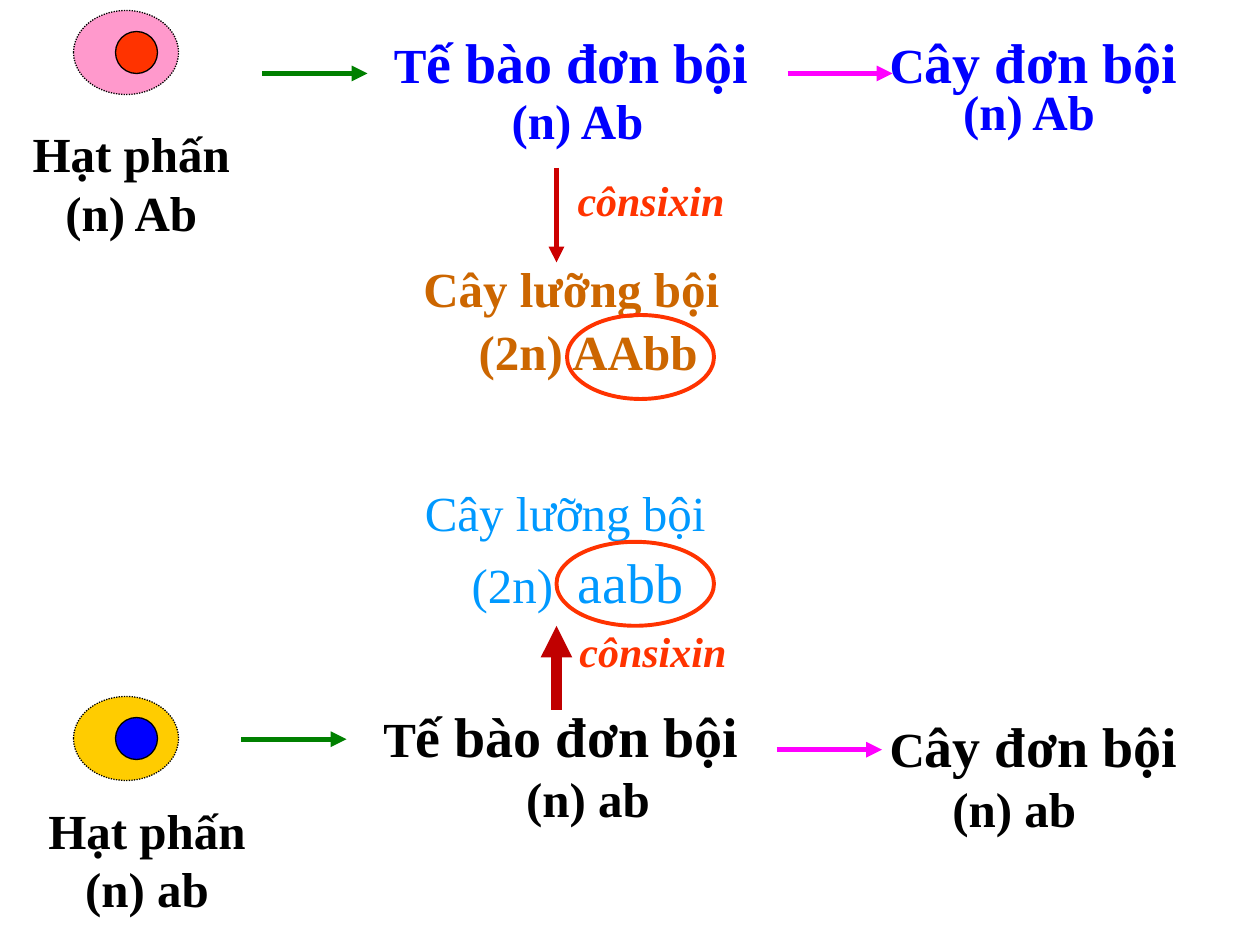
from pptx import Presentation
from pptx.dml.color import RGBColor
from pptx.enum.dml import MSO_LINE
from pptx.enum.shapes import MSO_CONNECTOR, MSO_SHAPE
from pptx.enum.text import MSO_AUTO_SIZE, PP_ALIGN
from pptx.oxml.ns import qn
from pptx.util import Pt
from lxml import etree

OVAL = MSO_SHAPE.OVAL
LINE = MSO_CONNECTOR.STRAIGHT
DOTS = MSO_LINE.ROUND_DOT
GROW = MSO_AUTO_SIZE.SHAPE_TO_FIT_TEXT
LEFT, MID = PP_ALIGN.LEFT, PP_ALIGN.CENTER

BLACK = RGBColor(0x00, 0x00, 0x00)
BLUE = RGBColor(0x00, 0x00, 0xFF)
SKY = RGBColor(0x00, 0x99, 0xFF)
PINK = RGBColor(0xFF, 0x99, 0xCC)
RED = RGBColor(0xFF, 0x33, 0x00)
GOLD = RGBColor(0xFF, 0xCC, 0x00)
BROWN = RGBColor(0xCC, 0x66, 0x00)
GREEN = RGBColor(0x00, 0x80, 0x00)
ROSE = RGBColor(0xFF, 0x00, 0xFF)
CRIMSON = RGBColor(0xCC, 0x00, 0x00)
DARK = RGBColor(0xC0, 0x00, 0x00)

FONT = "Times New Roman"
SPACE = 7  # width of one space at 28 pt

deck = Presentation()
deck.slide_width, deck.slide_height = Pt(720), Pt(540)
slide = deck.slides.add_slide(deck.slide_layouts[6])
shapes = slide.shapes


def oval(left, top, width, height, fill, color, weight):
    shape = shapes.add_shape(OVAL, Pt(left), Pt(top), Pt(width), Pt(height))
    shape.shadow.inherit = False
    if fill is None:
        shape.fill.background()
    else:
        shape.fill.solid()
        shape.fill.fore_color.rgb = fill
    shape.line.color.rgb = color
    shape.line.width = Pt(weight)
    return shape


def label(left, top, width, height, text, color, size=28, bold=True,
          slant=False, align=MID, padl=0, padr=0):
    """Text is one string, or a list of (string, size) runs."""
    box = shapes.add_textbox(Pt(left), Pt(top), Pt(width), Pt(height))
    frame = box.text_frame
    frame.word_wrap = True
    frame.auto_size = GROW
    frame.margin_left, frame.margin_right = Pt(7.2 + padl), Pt(7.2 + padr)
    para = frame.paragraphs[0]
    para.alignment = align
    para.space_before = Pt(4)
    font = para.font
    font.name, font.size, font.bold, font.italic = FONT, Pt(size), bold, slant
    font.color.rgb = color
    parts = [(text, size)] if isinstance(text, str) else text
    for word, points in parts:
        run = para.add_run()
        run.text = word
        if points != size:
            run.font.size = Pt(points)


# Pollen grains, each with its nucleus
for top, body, core in [(6, PINK, RED), (398, GOLD, BLUE)]:
    oval(42, top, 60, 48, body, BLACK, 0.75).line.dash_style = DOTS
    oval(66, top + 12, 24, 24, core, BLACK, 0.75)

# Arrows between the stages
for x1, y1, x2, y2, color, weight in [
    (150, 42, 210, 42, GREEN, 3),
    (138, 422.4, 198, 422.4, GREEN, 3),
    (450, 42, 510, 42, ROSE, 3),
    (444, 428.4, 504, 428.4, ROSE, 3),
    (318, 96, 318, 150, CRIMSON, 3),
    (318, 405.6, 318, 357.6, DARK, 6),
]:
    arrow = shapes.add_connector(LINE, Pt(x1), Pt(y1), Pt(x2), Pt(y2))
    arrow.line.color.rgb = color
    arrow.line.width = Pt(weight)
    stroke = arrow.line._get_or_add_ln()
    etree.SubElement(stroke, qn("a:tailEnd"), type="triangle")
    etree.SubElement(arrow._element.spPr, qn("a:effectLst"))

# Pollen labels
label(0, 67.2, 150, 74, "Hạt phấn (n) Ab", BLACK)
label(18, 453.6, 132, 74, "Hạt phấn (n) ab", BLACK)

# Haploid cells and plants: large names with a smaller initial
for left, top, width, first, rest, color in [
    (216, 12, 228, "T", "ế bào đơn bội", BLUE),
    (210, 397.2, 228, "T", "ế bào đơn bội", BLACK),
    (498, 12, 192, "C", "ây đơn bội", BLUE),
    (498, 403.2, 192, "C", "ây đơn bội", BLACK),
]:
    label(left, top, width, 45.4, [(first, 28), (rest, 32), (" ", 28)], color)

# Their genotypes
label(216, 48, 228, 41, "(n) Ab", BLUE)
label(492, 43.2, 192, 41, "(n) Ab", BLUE)
label(222, 435.6, 228, 41, "(n) ab", BLACK)
label(480, 441.6, 192, 41, "(n) ab", BLACK, padl=SPACE)

# Doubling agent
label(258, 96, 228, 36.7, "cônsixin", RED, size=24, slant=True)
label(324, 354, 132, 36.7, "cônsixin", RED, size=24, slant=True, align=LEFT)

# Diploid plants and their ringed genotypes
label(216, 144, 228, 41, "Cây lưỡng bội", BROWN, padr=SPACE)
label(222, 180, 228, 41, "(2n) AAbb", BROWN)
label(216, 272.4, 228, 41, "Cây lưỡng bội", SKY, bold=False,
      padr=2 * SPACE)
label(216, 309.6, 228, 45.4, [("(2n)  ", 28), ("aabb", 32)], SKY, bold=False)
oval(318, 309.6, 90, 48, None, RED, 2.25)
oval(324, 180, 84, 48, None, RED, 2.25)

deck.save("out.pptx")
